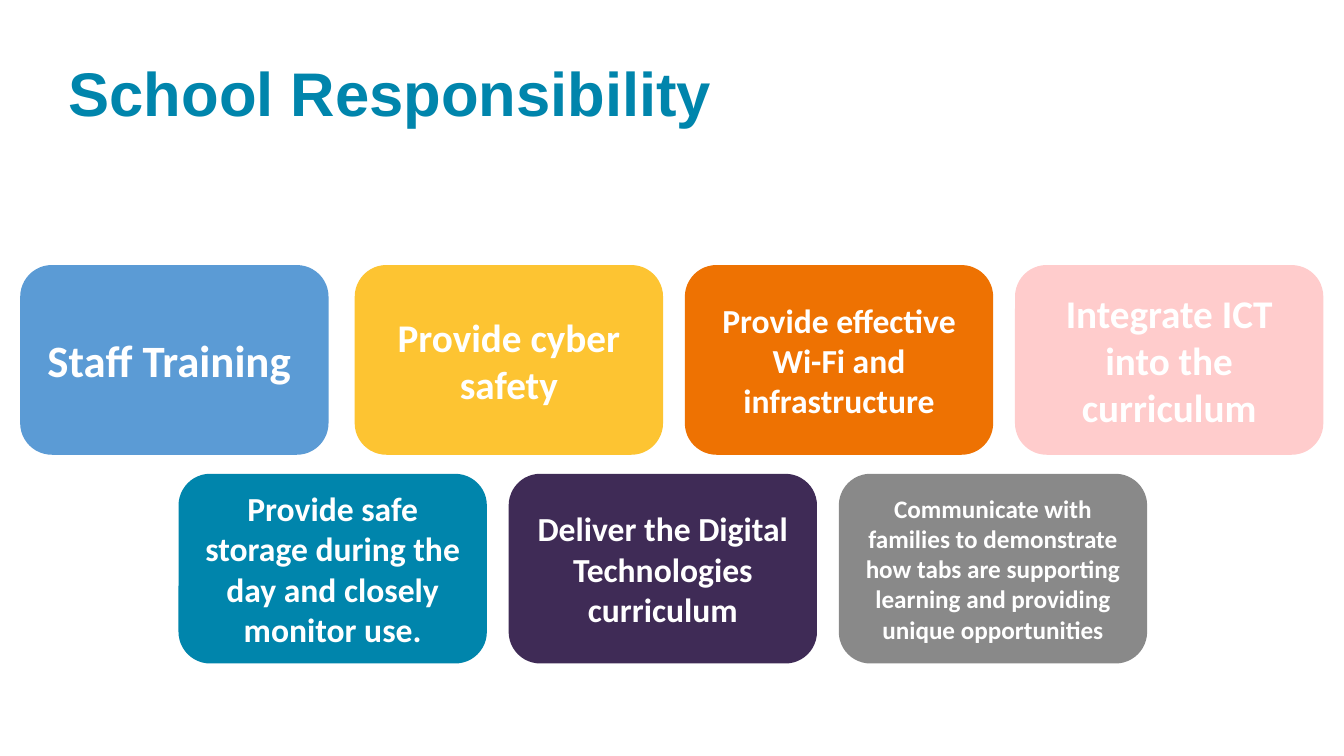
from pptx import Presentation
from pptx.dml.color import RGBColor
from pptx.enum.shapes import MSO_SHAPE
from pptx.enum.text import MSO_ANCHOR, PP_ALIGN
from pptx.util import Cm, Pt

HUES = {
    "white": "FFFFFF",
    "teal": "0085AC",
    "blue": "5B9BD5",
    "gold": "FDC432",
    "orange": "EE7202",
    "pink": "FFCCCC",
    "plum": "3F2B56",
    "grey": "898989",
}
WIDE, HIGH = 7.77, 4.78
STEP = 8.32

UPPER = [
    ("Staff Training ", 32, "blue"),
    ("Provide cyber safety", 28, "gold"),
    ("Provide effective Wi-Fi and infrastructure", 24, "orange"),
    ("Integrate ICT into the curriculum", 28, "pink"),
]
LOWER = [
    ("Provide safe storage during the day and closely monitor use.", 24, "teal"),
    ("Deliver the Digital Technologies curriculum", 24, "plum"),
    ("Communicate with families to demonstrate how tabs are supporting "
     "learning and providing unique opportunities", 18, "grey"),
]


def color(name):
    return RGBColor.from_string(HUES[name])


def add_run(para, text, size, face, hue):
    run = para.add_run()
    run.text = text
    run.font.size = Pt(size)
    run.font.name = face
    run.font.bold = True
    run.font.color.rgb = color(hue)


def set_title(slide, text):
    title = slide.shapes.title
    title.left, title.top = Cm(1.73), Cm(1.6)
    title.width, title.height = Cm(30.4), Cm(2.44)
    frame = title.text_frame
    frame.margin_left = frame.margin_right = 0
    frame.margin_top = frame.margin_bottom = 0
    frame.vertical_anchor = MSO_ANCHOR.TOP
    frame.word_wrap = True
    para = frame.paragraphs[0]
    para.alignment = PP_ALIGN.LEFT
    para.line_spacing = 0.9
    add_run(para, text, 44, "Arial", "teal")


def add_card(slide, left, top, text, size, hue):
    card = slide.shapes.add_shape(
        MSO_SHAPE.ROUNDED_RECTANGLE, Cm(left), Cm(top), Cm(WIDE), Cm(HIGH))
    card.shadow.inherit = False
    card.fill.solid()
    card.fill.fore_color.rgb = color(hue)
    card.line.fill.background()
    frame = card.text_frame
    frame.word_wrap = True
    frame.vertical_anchor = MSO_ANCHOR.MIDDLE
    para = frame.paragraphs[0]
    para.alignment = PP_ALIGN.CENTER
    add_run(para, text, size, "Calibri", "white")


def add_row(slide, left, top, cards):
    for i, card in enumerate(cards):
        add_card(slide, left + i * STEP, top, *card)


def main():
    deck = Presentation()
    deck.slide_width, deck.slide_height = Cm(33.87), Cm(19.05)
    slide = deck.slides.add_slide(deck.slide_layouts[5])
    set_title(slide, "School Responsibility")
    add_card(slide, 0.51, 6.68, *UPPER[0])
    add_row(slide, 8.94, 6.68, UPPER[1:])
    add_row(slide, 4.5, 11.94, LOWER)
    deck.save("out.pptx")


if __name__ == "__main__":
    main()
